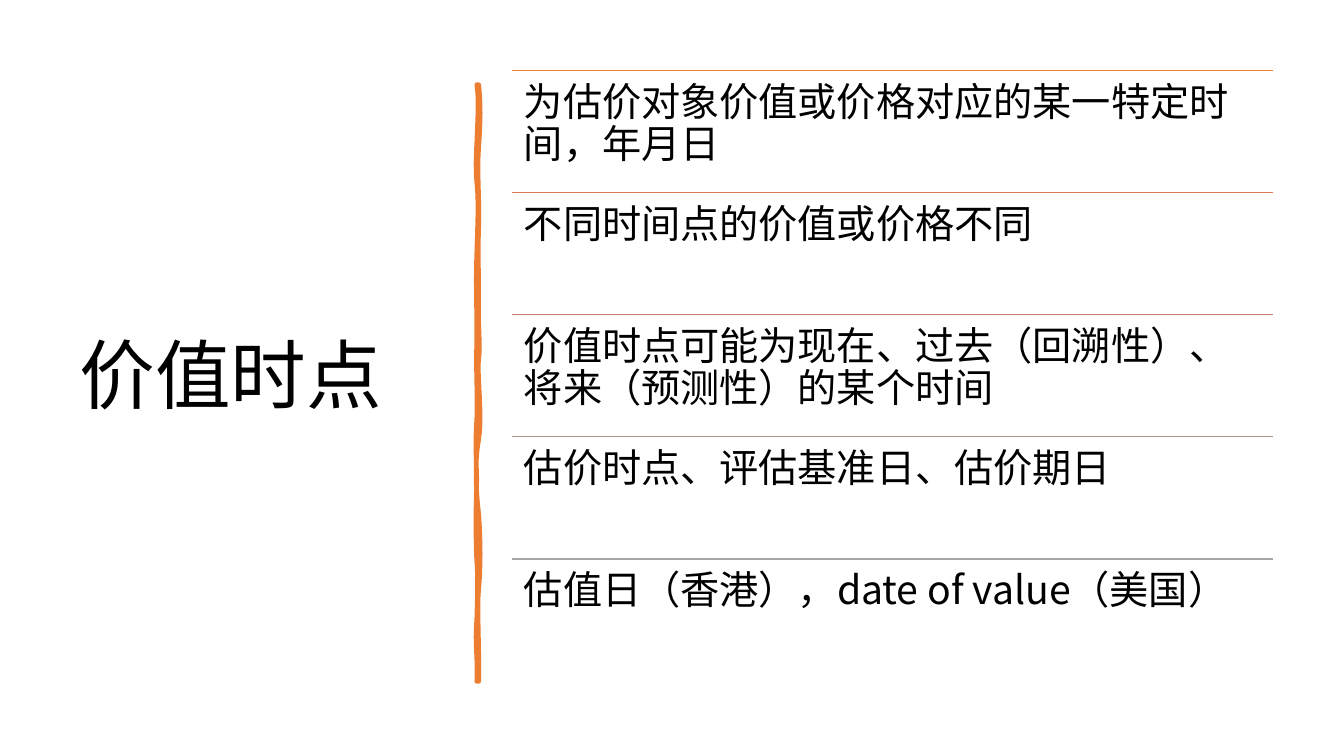
from lxml import etree
from pptx import Presentation
from pptx.dml.color import RGBColor
from pptx.enum.shapes import MSO_CONNECTOR
from pptx.enum.text import MSO_ANCHOR
from pptx.oxml.ns import qn
from pptx.util import Pt

STRAIGHT = MSO_CONNECTOR.STRAIGHT
TOP, MIDDLE = MSO_ANCHOR.TOP, MSO_ANCHOR.MIDDLE
BLACK = RGBColor(0x00, 0x00, 0x00)
ORANGE = RGBColor(0xED, 0x7D, 0x31)
FONT = "Noto Sans CJK SC"

ROW_LEFT, ROW_TOP, ROW_WIDTH, ROW_HEIGHT = 365.8, 50.4, 543.6, 87.2
ROWS = [
    (ORANGE, "为估价对象价值或价格对应的某一特定时间，年月日"),
    (RGBColor(0xD8, 0x7A, 0x51), "不同时间点的价值或价格不同"),
    (RGBColor(0xC4, 0x81, 0x70), "价值时点可能为现在、过去（回溯性）、将来（预测性）的某个时间"),
    (RGBColor(0xB4, 0x90, 0x8B), "估价时点、评估基准日、估价期日"),
    (RGBColor(0xA5, 0xA5, 0xA5), "估值日（香港），date of value（美国）"),
]

# Each edge of the brush stroke: a start point, then three points per curve.
RIGHT_EDGE = [
    (342, 60.5),
    (343.4, 73.4), (343.4, 85.7), (342, 105.1),
    (340.6, 124.6), (342.7, 140.4), (342, 162.7),
    (341.3, 185), (342, 188.6), (342, 211.7),
    (341.3, 234), (343.4, 246.2), (342, 256.3),
    (340.6, 266.4), (344.9, 298.1), (342, 313.9),
    (339.1, 329), (339.8, 348.5), (342, 367.2),
    (343.4, 385.9), (343.4, 406.1), (342, 420.5),
    (340.6, 434.2), (342.7, 468), (342, 486.7),
]
LEFT_EDGE = [
    (340.6, 486.7),
    (341.3, 465.1), (339.1, 463.7), (340.6, 441.4),
    (341.3, 419.8), (341.3, 410.4), (340.6, 401),
    (339.8, 391.7), (339.8, 356.4), (340.6, 343.4),
    (340.6, 330.5), (339.1, 320.4), (340.6, 298.8),
    (341.3, 277.9), (339.8, 268.6), (340.6, 241.2),
    (340.6, 214.6), (339.8, 202.3), (340.6, 180),
    (341.3, 157), (342, 144), (340.6, 130.3),
    (338.4, 117.4), (343.4, 74.9), (340.6, 60.5),
]


def curve_points(edge, steps=8):
    """Sample a chain of cubic Bezier curves into straight steps."""
    points = [edge[0]]
    for start in range(0, len(edge) - 1, 3):
        curve = edge[start:start + 4]
        for step in range(1, steps + 1):
            t = step / steps
            weights = ((1 - t) ** 3, 3 * t * (1 - t) ** 2, 3 * t ** 2 * (1 - t), t ** 3)
            points.append(tuple(
                sum(weight * point[axis] for weight, point in zip(weights, curve))
                for axis in (0, 1)
            ))
    return points


class SlideWriter:
    def __init__(self, page, font, color):
        self.page, self.font, self.color = page, font, color

    def text(self, words, left, top, width, height, size, anchor, inset_x, inset_y):
        box = self.page.shapes.add_textbox(Pt(left), Pt(top), Pt(width), Pt(height))
        frame_format = {
            "word_wrap": True, "vertical_anchor": anchor,
            "margin_left": Pt(inset_x), "margin_right": Pt(inset_x),
            "margin_top": Pt(inset_y), "margin_bottom": Pt(inset_y),
        }
        for name, value in frame_format.items():
            setattr(box.text_frame, name, value)
        para = box.text_frame.paragraphs[0]
        para.line_spacing = 0.9
        span = para.add_run()
        span.text = words
        for name, value in {"name": self.font, "size": Pt(size)}.items():
            setattr(span.font, name, value)
        span.font.color.rgb = self.color
        east_asian = etree.SubElement(span.font._element, qn("a:ea"))
        east_asian.set("typeface", self.font)

    def rule(self, left, top, width, color):
        line = self.page.shapes.add_connector(
            STRAIGHT, Pt(left), Pt(top), Pt(left + width), Pt(top))
        line.line.color.rgb = color
        line.line.width = Pt(1)
        etree.SubElement(line._element.spPr, qn("a:effectLst"))

    def brush_stroke(self, points, color, line_width):
        corners = [(Pt(x), Pt(y)) for x, y in points]
        builder = self.page.shapes.build_freeform(*corners[0])
        builder.add_line_segments(corners[1:], close=True)
        stroke = builder.convert_to_shape()
        stroke.shadow.inherit = False
        stroke.fill.solid()
        stroke.fill.fore_color.rgb = color
        stroke.line.color.rgb = color
        stroke.line.width = Pt(line_width)
        etree.SubElement(stroke._element.spPr.find(qn("a:ln")), qn("a:round"))


def main():
    deck = Presentation()
    deck.slide_width, deck.slide_height = Pt(960), Pt(540)
    page = deck.slides.add_slide(deck.slide_layouts[6])
    writer = SlideWriter(page, FONT, BLACK)

    writer.text("价值时点", 49.7, 50.4, 269.3, 440, 54, MIDDLE, 7.2, 3.6)
    writer.brush_stroke(curve_points(RIGHT_EDGE) + curve_points(LEFT_EDGE), ORANGE, 3.25)
    for index, (color, words) in enumerate(ROWS):
        top = ROW_TOP + index * ROW_HEIGHT
        writer.rule(ROW_LEFT, top, ROW_WIDTH, color)
        writer.text(words, ROW_LEFT, top, ROW_WIDTH, ROW_HEIGHT, 28, TOP, 8.4, 8.4)
    deck.save("out.pptx")


if __name__ == "__main__":
    main()
